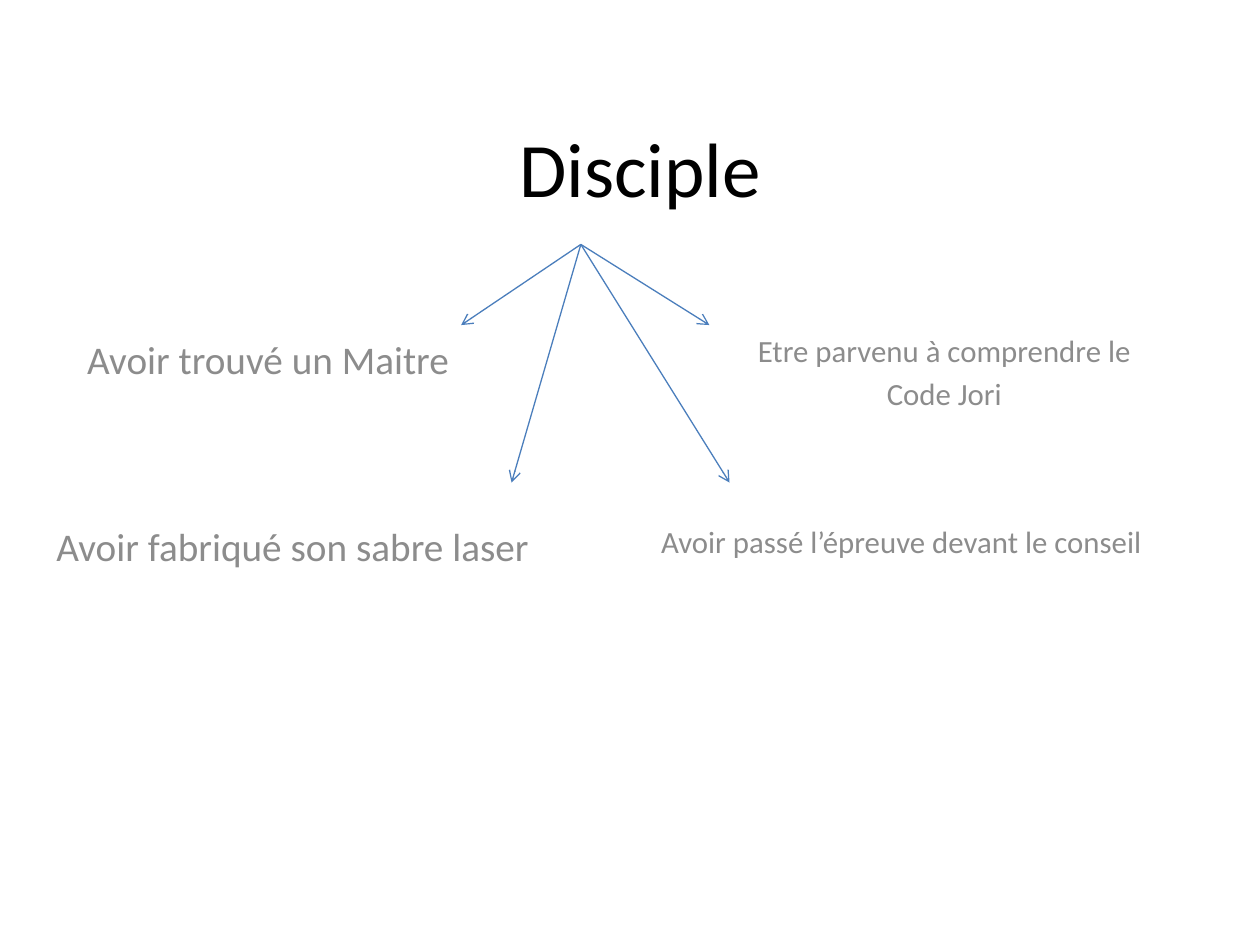
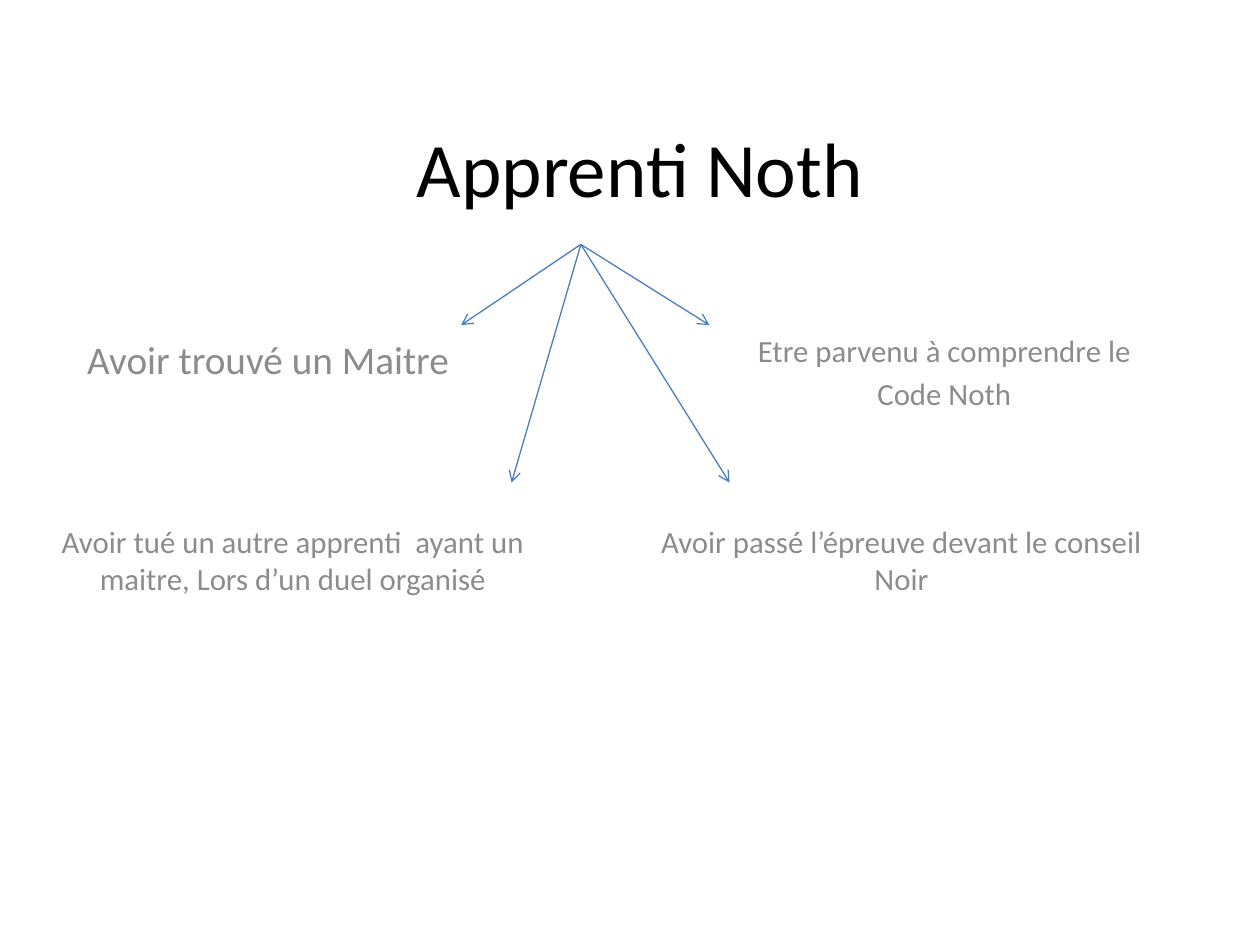
import pptx
import pptx.util
import pptx.dml.color
import pptx.enum.shapes
import pptx.enum.text
import pptx.oxml.ns
import lxml.etree

# Shared look
FONT = "Calibri"
BLACK, GREY, BLUE = "000000", "8C8C8C", "4B7EBC"
LARGE, SMALL = 22.4, 17.6

# Grid of the slide: 100 columns by 75 rows, boxes as left, top, width, height
WIDE, HIGH = pptx.util.Inches(10), pptx.util.Inches(7.5)
COLS, ROWS = 100, 75
HEAD = (8.3, 5.2, 85, 16.1)
TREE = (2, 19.4, 98, 27.6)

# Within the tree: where the arrows start, where they end, and the text cells
ROOT = (44.1, 0)
TIPS = [(34.6, 6.4), (54.3, 6.4), (38.6, 18.9), (55.9, 18.9)]
CELLS = [
    (0, 6.7, 38.6, 3.9),
    (47.9, 6.4, 50.1, 7),
    (0.8, 21.6, 40.9, 6),
    (47.9, 21.6, 43.3, 6),
]

# Title, then text and size of each cell
PAGES = [
    ("Disciple", [
        ("Avoir trouvé un Maitre", LARGE),
        ("Etre parvenu à comprendre le\nCode Jori", SMALL),
        ("Avoir fabriqué son sabre laser", LARGE),
        ("Avoir passé l’épreuve devant le conseil", SMALL),
    ]),
    ("Apprenti Noth", [
        ("Avoir trouvé un Maitre", LARGE),
        ("Etre parvenu à comprendre le\nCode Noth", SMALL),
        ("Avoir tué un autre apprenti  ayant un maitre, Lors d’un duel organisé", SMALL),
        ("Avoir passé l’épreuve devant le conseil Noir", SMALL),
    ]),
]


def color(code):
    return pptx.dml.color.RGBColor.from_string(code)


def grid(col, row):
    return round(WIDE * col / COLS), round(HIGH * row / ROWS)


def write(frame, text, size, tone, gap=0):
    """Fill a frame with centred paragraphs in the shared font."""
    frame.text = text
    frame.word_wrap = True
    for par in frame.paragraphs:
        par.alignment = pptx.enum.text.PP_ALIGN.CENTER
        par.space_before = pptx.util.Pt(gap)
        for run in par.runs:
            run.font.name = FONT
            run.font.size = pptx.util.Pt(size)
            run.font.color.rgb = color(tone)


def arrow(slide, start, end):
    line = slide.shapes.add_connector(
        pptx.enum.shapes.MSO_CONNECTOR.STRAIGHT, *grid(*start), *grid(*end))
    line.line.color.rgb = color(BLUE)
    line.line.width = pptx.util.Pt(0.75)
    # Open arrowhead, no shadow
    edge = line.line._get_or_add_ln()
    lxml.etree.SubElement(edge, pptx.oxml.ns.qn("a:tailEnd"), type="arrow")
    lxml.etree.SubElement(line._element.spPr, pptx.oxml.ns.qn("a:effectLst"))


def title(slide, box, text):
    head = slide.shapes.title
    head.left, head.top = grid(*box[:2])
    head.width, head.height = grid(*box[2:])
    head.text_frame.vertical_anchor = pptx.enum.text.MSO_ANCHOR.MIDDLE
    write(head.text_frame, text, 44, BLACK)


def tree(slide, box, items):
    """Four conditions, each with an arrow from the root."""
    left, top = box[:2]
    for (col, row, wide, high), (text, size) in zip(CELLS, items):
        cell = slide.shapes.add_textbox(
            *grid(left + col, top + row), *grid(wide, high))
        write(cell.text_frame, text, size, GREY, gap=size / 5)
    root = (left + ROOT[0], top + ROOT[1])
    for col, row in TIPS:
        arrow(slide, root, (left + col, top + row))


def main():
    deck = pptx.Presentation()
    deck.slide_width, deck.slide_height = WIDE, HIGH
    for name, items in PAGES:
        slide = deck.slides.add_slide(deck.slide_layouts.get_by_name("Title Only"))
        title(slide, HEAD, name)
        tree(slide, TREE, items)
    deck.save("out.pptx")


if __name__ == "__main__":
    main()
